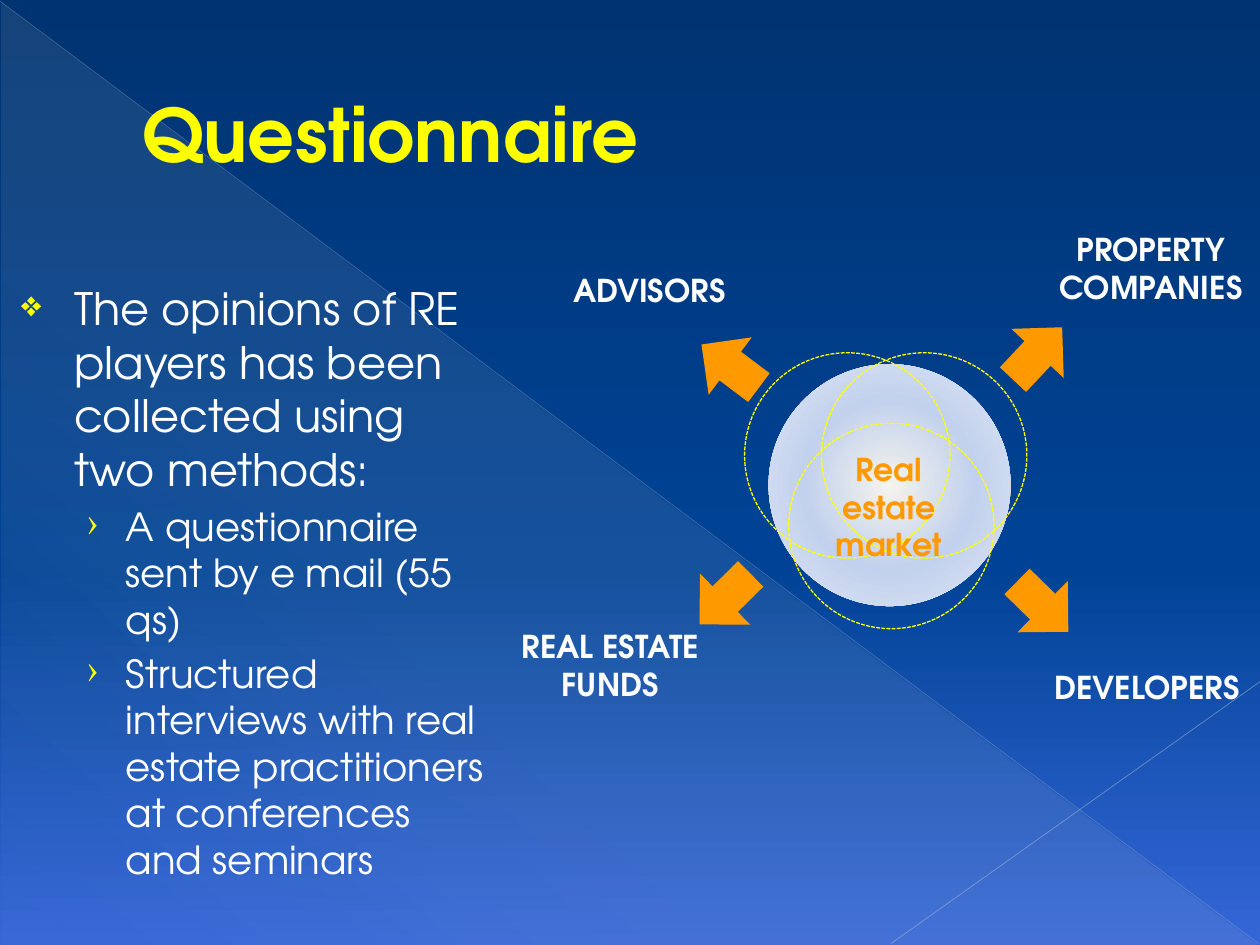
from dataclasses import dataclass

from pptx import Presentation
from pptx.dml.color import RGBColor
from pptx.enum.dml import MSO_LINE
from pptx.enum.shapes import MSO_CONNECTOR, MSO_SHAPE
from pptx.enum.text import MSO_ANCHOR, PP_ALIGN
from pptx.oxml.ns import qn
from pptx.util import Inches, Pt
from lxml.etree import SubElement


@dataclass(frozen=True)
class Theme:
    font: str = "TeX Gyre Adventor"
    white: str = "FFFFFF"
    yellow: str = "FFFF00"
    orange: str = "FF9900"
    title_size: float = 42
    body_size: float = 25.5
    detail_size: float = 22.1
    label_size: float = 18
    sky: tuple = ((0, "003371", 100), (60, "004396", 100), (100, "3566D7", 100))
    veil: tuple = ((0, "EEECE1", 10), (70, "EEECE1", 8), (100, "EEECE1", 1))
    globe: tuple = ((0, "F5F4ED", 100), (50, "C2D1ED", 100), (100, "E1E8F5", 100))
    diagonal: str = "ADB6CE"
    corner: str = "B6BED3"


class SlideBuilder:
    def __init__(self, page, theme):
        self.page = page
        self.theme = theme

    def gradient(self, fill, element, stops, angle=None):
        fill.gradient()
        grad = next(element.iter(qn("a:gradFill")))
        stop_list = grad.find(qn("a:gsLst"))
        for stop in list(stop_list):
            stop_list.remove(stop)
        for position, color, opacity in stops:
            stop = SubElement(stop_list, qn("a:gs"), pos=str(position * 1000))
            rgb = SubElement(stop, qn("a:srgbClr"), val=color)
            SubElement(rgb, qn("a:alpha"), val=str(opacity * 1000))
        direction = grad.find(qn("a:lin"))
        if angle is not None:
            direction.set("ang", str(angle * 60000))
        else:
            grad.remove(direction)
            radial = SubElement(grad, qn("a:path"))
            radial.set("path", "circle")
            SubElement(radial, qn("a:fillToRect"), l="50000", t="50000", r="50000", b="50000")

    def background(self):
        self.gradient(self.page.background.fill, self.page.element, self.theme.sky, 90)

    def shape(self, kind, left, top, width, height):
        shape = self.page.shapes.add_shape(
            kind, Inches(left), Inches(top), Inches(width), Inches(height))
        shape.shadow.inherit = False
        shape.line.fill.background()
        return shape

    def gradient_shape(self, kind, left, top, width, height, stops, angle=None):
        shape = self.shape(kind, left, top, width, height)
        self.gradient(shape.fill, shape.element, stops, angle)

    def ring(self, left, top):
        ring = self.shape(MSO_SHAPE.OVAL, left, top, 1.63, 1.63)
        ring.fill.background()
        ring.line.color.rgb = RGBColor.from_string(self.theme.yellow)
        ring.line.width = Pt(0.75)
        ring.line.dash_style = MSO_LINE.SQUARE_DOT

    def arrow(self, left, top, rotation):
        arrow = self.shape(MSO_SHAPE.RIGHT_ARROW, left, top, 0.57, 0.57)
        arrow.fill.solid()
        arrow.fill.fore_color.rgb = RGBColor.from_string(self.theme.orange)
        arrow.rotation = rotation

    def line(self, start, end, color, width, opacity):
        line = self.page.shapes.add_connector(
            MSO_CONNECTOR.STRAIGHT, *(Inches(value) for value in start + end))
        line.line.color.rgb = RGBColor.from_string(color)
        line.line.width = Pt(width)
        rgb = next(line.element.iter(qn("a:srgbClr")))
        SubElement(rgb, qn("a:alpha"), val=str(opacity * 1000))
        SubElement(line.element.spPr, qn("a:effectLst"))

    def frame(self, left, top, width, height):
        box = self.page.shapes.add_textbox(
            Inches(left), Inches(top), Inches(width), Inches(height))
        box.text_frame.word_wrap = True
        return box.text_frame

    def set_text(self, para, text, size, color, bold=False):
        para.text = text
        para.font.name = self.theme.font
        para.font.size = Pt(size)
        para.font.bold = bold
        para.font.color.rgb = RGBColor.from_string(color)

    def indent(self, para, left, first=0):
        properties = para._p.get_or_add_pPr()
        properties.set("marL", str(Inches(left)))
        properties.set("indent", str(Inches(first)))
        return properties

    def title(self, text):
        frame = self.frame(0.5, 0.29, 9, 1.53)
        frame.vertical_anchor = MSO_ANCHOR.MIDDLE
        para = frame.paragraphs[0]
        self.set_text(para, text, self.theme.title_size, self.theme.yellow, True)
        self.indent(para, 0.53)

    def bullet(self, para, text, level):
        size, left, first, symbol, scale = (
            (self.theme.body_size, 0.49, -0.42, "❖", 80),
            (self.theme.detail_size, 0.9, -0.31, "›", 95),
        )[level]
        para.level = level
        para.space_before = Pt(round(size * 0.2, 1))
        self.set_text(para, text, size, self.theme.white)
        properties = self.indent(para, left, first)
        color = SubElement(properties, qn("a:buClr"))
        SubElement(color, qn("a:srgbClr"), val=self.theme.yellow)
        scaling = SubElement(properties, qn("a:buSzPct"), val=str(scale * 1000))
        mark = SubElement(properties, qn("a:buChar"), char=symbol)
        default = properties.find(qn("a:defRPr"))
        for element in (color, scaling, mark):
            default.addprevious(element)

    def body(self, items):
        frame = self.frame(0, 2.18, 3.94, 5)
        for index, (level, text) in enumerate(items):
            para = frame.add_paragraph() if index else frame.paragraphs[0]
            self.bullet(para, text, level)

    def label(self, text, left, top, width, height, color, align):
        para = self.frame(left, top, width, height).paragraphs[0]
        self.set_text(para, text, self.theme.label_size, color, True)
        para.alignment = align


def main():
    deck = Presentation()
    deck.slide_width, deck.slide_height = Inches(10), Inches(7.5)
    theme = Theme()
    slide = SlideBuilder(deck.slides.add_slide(deck.slide_layouts[6]), theme)

    slide.background()
    slide.gradient_shape(MSO_SHAPE.RIGHT_TRIANGLE, 0.01, 0.02, 9.98, 7.48, theme.veil, 133)
    slide.line((0, 0.01), (9.99, 7.49), theme.diagonal, 0.39, 35)
    slide.line((10, 5.41), (7.07, 7.49), theme.corner, 0.47, 45)

    slide.title("Questionnaire")
    slide.body((
        (0, "The opinions of RE players has been collected using two methods:"),
        (1, "A questionnaire sent by e mail (55 qs)"),
        (1, "Structured interviews with real estate practitioners at conferences and seminars"),
    ))

    slide.gradient_shape(MSO_SHAPE.OVAL, 6.1, 2.89, 1.92, 1.92, theme.globe)
    for left, top in ((6.26, 3.36), (5.91, 2.8), (6.52, 2.8)):
        slide.ring(left, top)
    for left, top, rotation in (
        (7.99, 4.53, 44.4), (5.47, 4.47, 135.4), (5.51, 2.62, 216.9), (7.95, 2.52, 313.2),
    ):
        slide.arrow(left, top, rotation)

    slide.label("Real estate market", 6.42, 3.52, 1.27, 1.01, theme.orange, PP_ALIGN.CENTER)
    for text, left, top, height, align in (
        ("DEVELOPERS", 8.27, 5.25, 0.4, PP_ALIGN.LEFT),
        ("REAL ESTATE FUNDS", 3.98, 4.93, 0.71, PP_ALIGN.CENTER),
        ("PROPERTY COMPANIES", 8.27, 1.78, 0.71, PP_ALIGN.CENTER),
        ("ADVISORS", 4.45, 2.1, 0.4, PP_ALIGN.LEFT),
    ):
        slide.label(text, left, top, 1.73, height, theme.white, align)

    deck.save("out.pptx")


if __name__ == "__main__":
    main()
